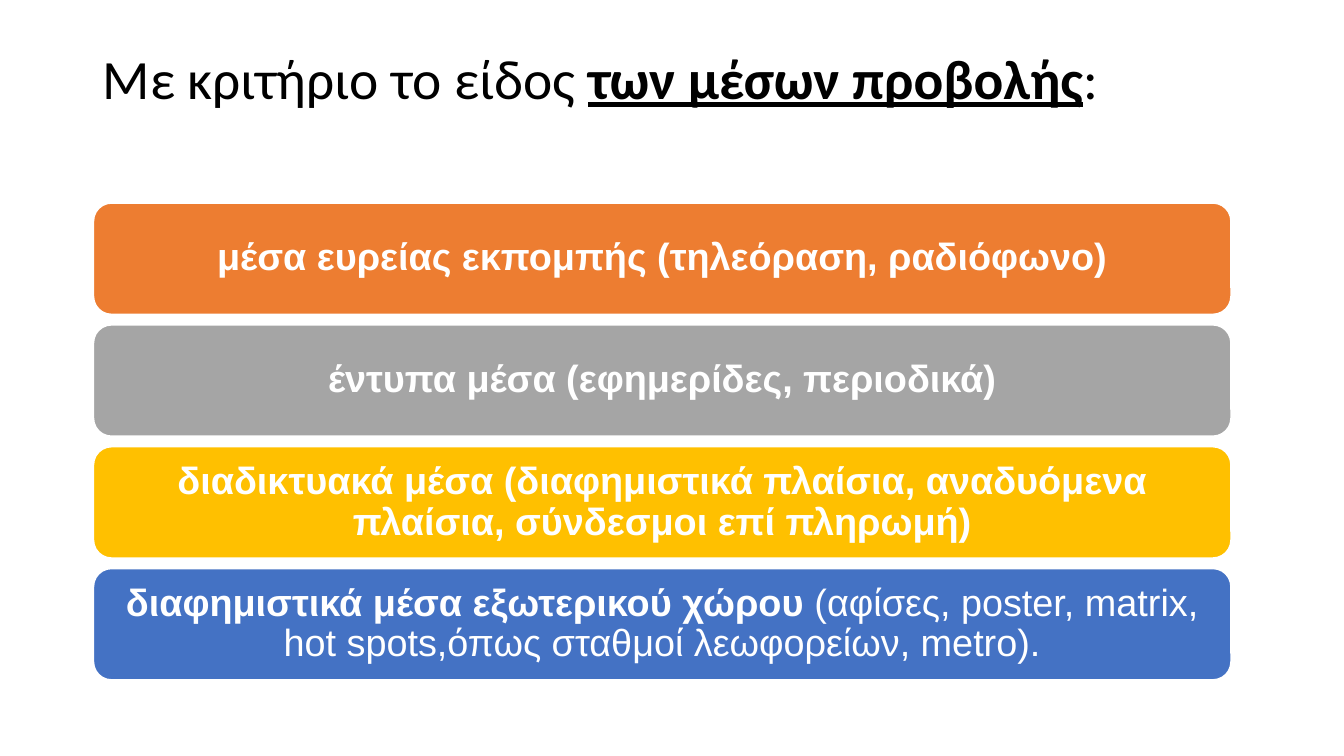
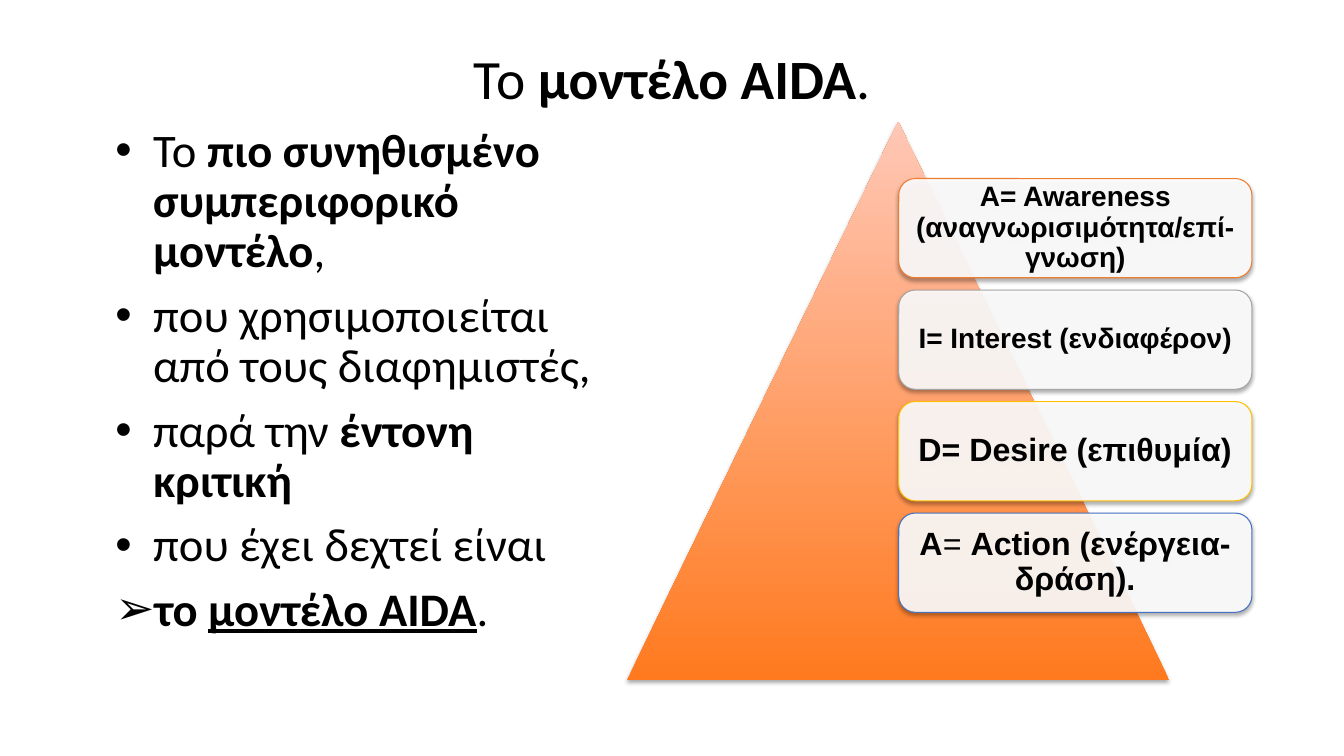
from lxml import etree
from pptx import Presentation
from pptx.dml.color import RGBColor
from pptx.enum.shapes import MSO_SHAPE
from pptx.enum.text import MSO_ANCHOR, MSO_AUTO_SIZE, PP_ALIGN
from pptx.oxml.ns import qn
from pptx.util import Cm, Pt

ROUNDED = MSO_SHAPE.ROUNDED_RECTANGLE
TRIANGLE = MSO_SHAPE.ISOSCELES_TRIANGLE
TOP, MIDDLE = MSO_ANCHOR.TOP, MSO_ANCHOR.MIDDLE
NO_FIT = MSO_AUTO_SIZE.NONE
LEFT, CENTER = PP_ALIGN.LEFT, PP_ALIGN.CENTER

TITLE_AND_BODY, TITLE_ONLY = 1, 5
HEADING_FONT, BOX_FONT = "Calibri", "Arial"
BLACK, WHITE = "000000", "FFFFFF"
ACCENTS = ["ED7D31", "A5A5A5", "FFC000", "4472C4"]
PYRAMID_BASE, PYRAMID_TIP = "FF7A1F", "FFC7B6"
MARGIN = 2.34
LINE_SPACING = 0.9

MEDIA = [
    [("μέσα ευρείας εκπομπής (τηλεόραση, ραδιόφωνο)", "b")],
    [("έντυπα μέσα (εφημερίδες, περιοδικά)", "b")],
    [("διαδικτυακά μέσα (διαφημιστικά πλαίσια, αναδυόμενα πλαίσια, "
      "σύνδεσμοι επί πληρωμή)", "b")],
    [("διαφημιστικά μέσα εξωτερικού χώρου ", "b"),
     ("(αφίσες, poster, matrix, hot spots,όπως σταθμοί λεωφορείων, metro).", "")],
]
MODEL_POINTS = [
    ("•", [("Το ", ""), ("πιο συνηθισμένο συμπεριφορικό μοντέλο", "b"), (",", "")]),
    ("•", [("που χρησιμοποιείται από τους διαφημιστές,", "")]),
    ("•", [("παρά την ", ""), ("έντονη κριτική", "b")]),
    ("•", [("που έχει δεχτεί είναι", "")]),
    ("➢", [("το ", "b"), ("μοντέλο AIDA", "bu"), (".", "")]),
]
AIDA_STEPS = [
    (20, 0.2, [("A= Awareness (αναγνωρισιμότητα/επί-γνωση)", "b")]),
    (20, 0.2, [("I= Interest (ενδιαφέρον)", "b")]),
    (23, 0.25, [("D= Desire (επιθυμία)", "b")]),
    (23, 0.25, [("A", "b"), ("= ", ""), ("Action (ενέργεια-δράση).", "b")]),
]


def rgb(code):
    """Turn a hex string into a colour."""
    return RGBColor.from_string(code)


def place(shape, left, top, width, height):
    """Move and size a shape, in centimetres."""
    shape.left, shape.top = Cm(left), Cm(top)
    shape.width, shape.height = Cm(width), Cm(height)


def set_frame(frame, anchor, side, upright):
    """Set wrapping, anchor and insets of a text frame."""
    frame.word_wrap = True
    frame.auto_size = NO_FIT
    frame.vertical_anchor = anchor
    frame.margin_left = frame.margin_right = Cm(side)
    frame.margin_top = frame.margin_bottom = Cm(upright)


def write_spans(para, spans, font, size, color, align):
    """Write (text, style) spans, where b is bold and u is underlined."""
    para.alignment = align
    para.line_spacing = LINE_SPACING
    for text, style in spans:
        span = para.add_run()
        span.text = text
        span.font.name = font
        span.font.size = Pt(size)
        span.font.bold = "b" in style
        span.font.underline = "u" in style
        span.font.color.rgb = rgb(color)


def set_bullet(para, char):
    """Give a paragraph a hanging bullet."""
    properties = para._p.get_or_add_pPr()
    properties.set("marL", str(Cm(1.27)))
    properties.set("indent", str(-Cm(0.95)))
    etree.SubElement(properties, qn("a:buFont"), typeface=BOX_FONT)
    etree.SubElement(properties, qn("a:buChar"), char=char)


def add_shadow(shape):
    """Give a shape a soft shadow below it."""
    effects = shape.element.spPr.find(qn("a:effectLst"))
    shadow = etree.SubElement(effects, qn("a:outerShdw"), blurRad=str(Pt(3.1)),
                              dist=str(Pt(1.8)), dir="5400000", rotWithShape="0")
    color = etree.SubElement(shadow, qn("a:srgbClr"), val=BLACK)
    etree.SubElement(color, qn("a:alpha"), val="35000")


def set_opacity(shape, percent):
    """Make the solid fill of a shape partly transparent."""
    color = shape.element.spPr.find(qn("a:solidFill")).find(qn("a:srgbClr"))
    etree.SubElement(color, qn("a:alpha"), val=str(percent * 1000))


def add_page(deck, layout, spans, align):
    """Add a page with its title."""
    page = deck.slides.add_slide(deck.slide_layouts[layout])
    title = page.shapes.title
    place(title, MARGIN, 1, 29.2, 2.1)
    set_frame(title.text_frame, MIDDLE, 0.25, 0.13)
    write_spans(title.text_frame.paragraphs[0], spans, HEADING_FONT, 39.6, BLACK, align)
    return page


def add_box(page, area, fill, line, line_width, spans, size, color, inset):
    """Add a rounded box with centred text."""
    box = page.shapes.add_shape(ROUNDED, *map(Cm, area))
    box.shadow.inherit = False
    box.fill.solid()
    box.fill.fore_color.rgb = rgb(fill)
    box.line.color.rgb = rgb(line)
    box.line.width = Pt(line_width)
    set_frame(box.text_frame, MIDDLE, inset, inset)
    write_spans(box.text_frame.paragraphs[0], spans, BOX_FONT, size, color, CENTER)
    return box


def add_pyramid(page):
    """Add the shaded triangle behind the steps."""
    pyramid = page.shapes.add_shape(TRIANGLE, Cm(15.8), Cm(3.07), Cm(13.67), Cm(14.07))
    pyramid.shadow.inherit = False
    pyramid.line.fill.background()
    pyramid.fill.gradient()
    pyramid.fill.gradient_angle = 90
    for stop, color in zip(pyramid.fill.gradient_stops, (PYRAMID_BASE, PYRAMID_TIP)):
        stop.color.rgb = rgb(color)
    add_shadow(pyramid)


def fill_body(body, points):
    """Write the bulleted points into the body placeholder."""
    place(body, MARGIN, 3.07, 13.49, 14.07)
    frame = body.text_frame
    set_frame(frame, TOP, 0.25, 0.13)
    for index, (char, spans) in enumerate(points):
        para = frame.add_paragraph() if index else frame.paragraphs[0]
        para.space_before = Pt(10 if index else 0)
        para.line_spacing = LINE_SPACING
        set_bullet(para, char)
        write_spans(para, spans, HEADING_FONT, 33.3, BLACK, LEFT)


def build_media_page(deck):
    """Build the page on advertising media."""
    page = add_page(deck, TITLE_ONLY, [("Με κριτήριο το είδος ", ""),
                                       ("των μέσων προβολής", "bu"), (":", "")], LEFT)
    for index, (spans, accent) in enumerate(zip(MEDIA, ACCENTS)):
        area = (MARGIN, 5.1 + 3.07 * index, 28.7, 2.84)
        add_box(page, area, accent, WHITE, 2, spans, 27, WHITE, 0.28)


def build_model_page(deck):
    """Build the page on the AIDA model."""
    page = add_page(deck, TITLE_AND_BODY, [("Το ", ""), ("μοντέλο AIDA", "b"),
                                           (".", "")], CENTER)
    fill_body(page.placeholders[1], MODEL_POINTS)
    add_pyramid(page)
    for index, ((size, inset, spans), accent) in enumerate(zip(AIDA_STEPS, ACCENTS)):
        area = (22.65, 4.5 + 2.81 * index, 8.9, 2.5)
        box = add_box(page, area, WHITE, accent, 0.75, spans, size, BLACK, inset)
        set_opacity(box, 90)
        add_shadow(box)


def main():
    """Build and save the deck."""
    deck = Presentation()
    deck.slide_width, deck.slide_height = Cm(33.87), Cm(19.05)
    build_media_page(deck)
    build_model_page(deck)
    deck.save("out.pptx")


if __name__ == "__main__":
    main()
